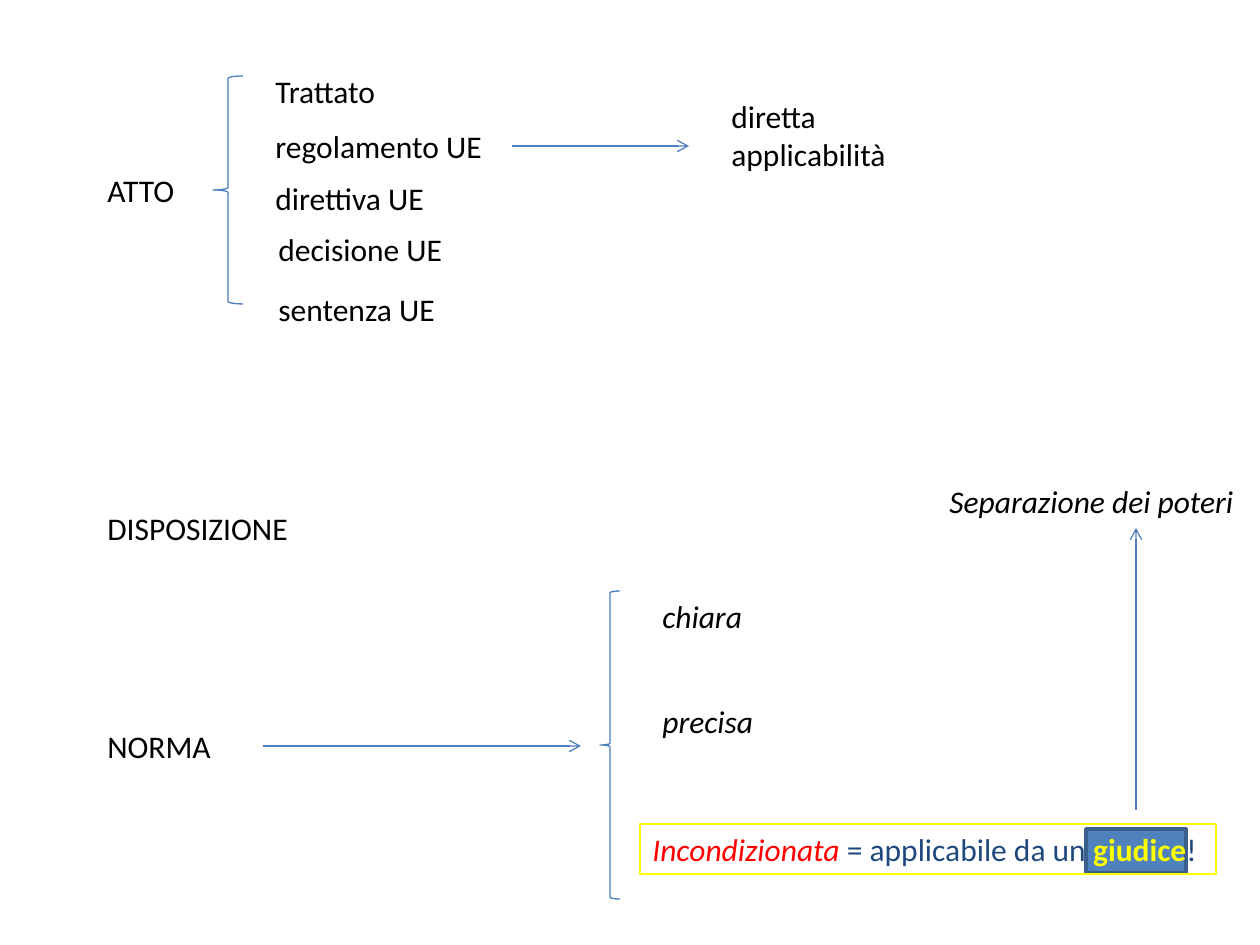
import pptx
import pptx.dml.color
import pptx.enum.dml
import pptx.enum.shapes
import pptx.enum.text
import pptx.oxml
import pptx.oxml.ns
import pptx.util
from dataclasses import dataclass

EMU_PER_PX = 914400 / 126
ROW_HEIGHT = 50


@dataclass(frozen=True)
class Theme:
    font: str = "Calibri"
    size: int = 18
    thin: float = 0.75
    thick: float = 2
    text: str = "000000"
    navy: str = "1F497D"
    red: str = "FF0000"
    yellow: str = "FFFF00"
    stroke: str = "4B7EBC"
    block: str = "4F81BD"
    block_edge: str = "3A5F8C"


def emu(*lengths):
    return [pptx.util.Emu(round(length * EMU_PER_PX)) for length in lengths]


def rgb(value):
    return pptx.dml.color.RGBColor.from_string(value)


class Diagram:
    def __init__(self, slide, theme):
        self.slide = slide
        self.theme = theme

    def _stroke(self, line, color=None, width=None):
        line.color.rgb = rgb(color or self.theme.stroke)
        line.width = pptx.util.Pt(width or self.theme.thin)

    def _write(self, frame, runs):
        """Fill a frame with (wording, colour, format) runs in one paragraph."""
        frame.word_wrap = True
        frame.auto_size = pptx.enum.text.MSO_AUTO_SIZE.SHAPE_TO_FIT_TEXT
        paragraph = frame.paragraphs[0]
        paragraph.alignment = pptx.enum.text.PP_ALIGN.LEFT
        for wording, color, extra in runs:
            run = paragraph.add_run()
            run.text = wording
            run.font.color.rgb = rgb(color)
            values = {"name": self.theme.font,
                      "size": pptx.util.Pt(self.theme.size),
                      "italic": False, "bold": False, **extra}
            for attribute, value in values.items():
                setattr(run.font, attribute, value)

    def label(self, wording, left, top, width, height=ROW_HEIGHT, **extra):
        box = self.slide.shapes.add_textbox(*emu(left, top, width, height))
        self._write(box.text_frame, [(wording, self.theme.text, extra)])

    def _shape(self, kind, bounds, fill=None, color=None, width=None):
        shape = self.slide.shapes.add_shape(kind, *emu(*bounds))
        shape.shadow.inherit = False
        if fill:
            shape.fill.solid()
            shape.fill.fore_color.rgb = rgb(fill)
        else:
            shape.fill.background()
        self._stroke(shape.line, color, width)
        return shape

    def brace(self, *bounds):
        self._shape(pptx.enum.shapes.MSO_SHAPE.LEFT_BRACE, bounds)

    def highlight(self, *bounds):
        self._shape(pptx.enum.shapes.MSO_SHAPE.RECTANGLE, bounds,
                    self.theme.block, self.theme.block_edge, self.theme.thick)

    def framed(self, runs, *bounds):
        frame = self._shape(pptx.enum.shapes.MSO_SHAPE.RECTANGLE, bounds,
                            color=self.theme.yellow)
        self._write(frame.text_frame, runs)

    def arrow(self, *ends):
        arrow = self.slide.shapes.add_connector(
            pptx.enum.shapes.MSO_CONNECTOR.STRAIGHT, *emu(*ends))
        self._stroke(arrow.line)
        outline = arrow.line._get_or_add_ln()
        head = pptx.oxml.parse_xml(
            f'<a:tailEnd {pptx.oxml.ns.nsdecls("a")} type="arrow"/>')
        outline.append(head)
        outline.addnext(pptx.oxml.parse_xml(
            f'<a:effectLst {pptx.oxml.ns.nsdecls("a")}/>'))


def main():
    deck = pptx.Presentation()
    deck.slide_width, deck.slide_height = emu(1260, 945)
    theme = Theme()
    diagram = Diagram(deck.slides.add_slide(deck.slide_layouts[6]), theme)

    diagram.highlight(1086, 829, 100, 44)

    for stage, top, width in (("ATTO", 165, 110), ("DISPOSIZIONE", 503, 338),
                              ("NORMA", 721, 367)):
        diagram.label(stage, 95, top, width)

    diagram.brace(213, 76, 30, 228)
    for act, left, top, width in (("Trattato", 263, 66, 238),
                                  ("regolamento UE", 263, 121, 238),
                                  ("direttiva UE", 263, 173, 258),
                                  ("decisione UE", 266, 224, 297),
                                  ("sentenza UE", 266, 284, 236)):
        diagram.label(act, left, top, width)
    diagram.arrow(512, 146, 689, 146)
    diagram.label("diretta applicabilità", 719, 91, 248, 89)

    diagram.arrow(263, 746, 581, 746)
    diagram.brace(600, 591, 20, 308)
    diagram.label("chiara", 650, 591, 287, italic=True)
    diagram.label("precisa", 650, 696, 169, italic=True)
    diagram.framed([("Incondizionata ", theme.red, {"italic": True}),
                    ("= applicabile da un ", theme.navy, {}),
                    ("giudice", theme.yellow, {"bold": True}),
                    ("!", theme.navy, {})], 640, 824, 576, ROW_HEIGHT)
    diagram.arrow(1136, 810, 1136, 528)
    diagram.label("Separazione dei poteri", 937, 476, 323, italic=True)

    deck.save("out.pptx")


if __name__ == "__main__":
    main()
